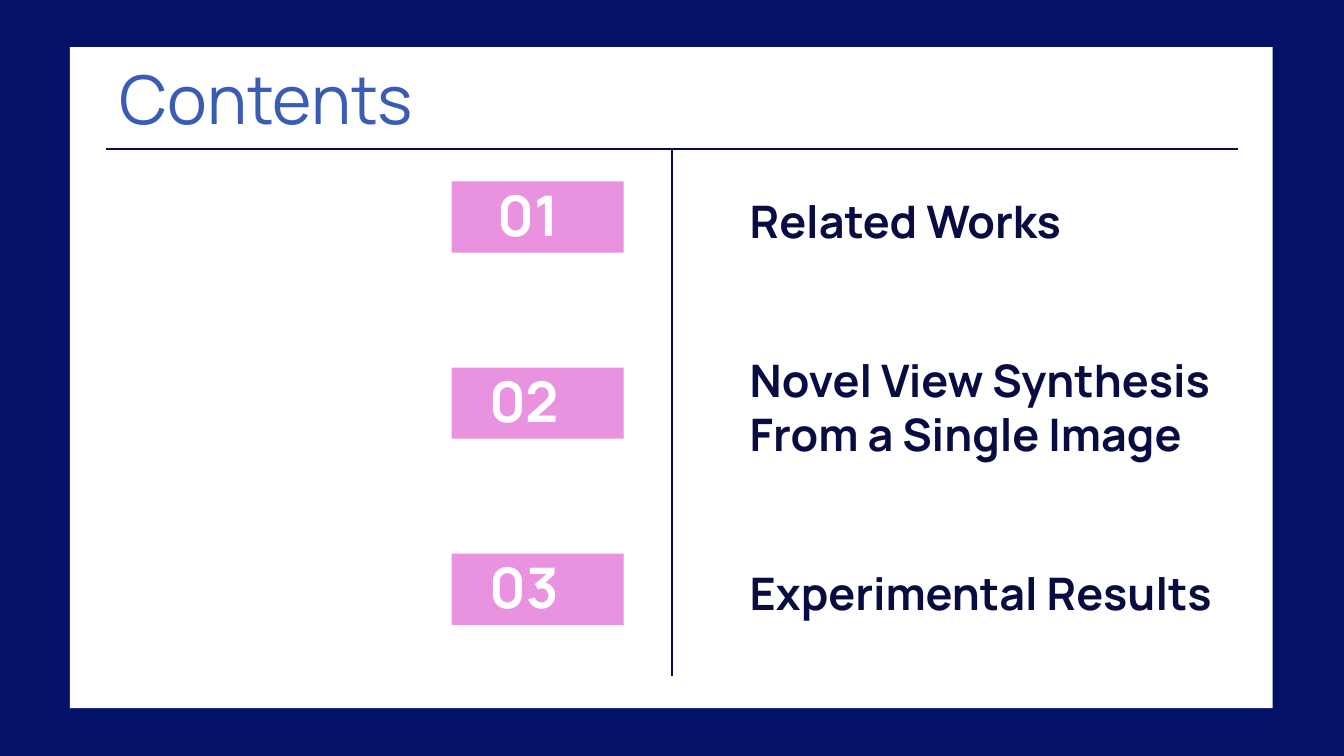
from pptx import Presentation
from pptx.dml.color import RGBColor
from pptx.enum.shapes import MSO_CONNECTOR as Connector, MSO_SHAPE as Shape
from pptx.enum.text import MSO_ANCHOR as Anchor, MSO_AUTO_SIZE as AutoSize, PP_ALIGN as Align
from pptx.oxml.ns import qn
from pptx.util import Inches, Pt

COLORS = {"navy": "031267", "ink": "080C41", "pink": "E992DF", "blue": "3B5CB3", "white": "FFFFFF"}
FONT = "Manrope"
WIDTH = 10
HEIGHT = WIDTH * 9 / 16
MIDDLE = WIDTH / 2
MARGIN, RULE_Y = 0.79, 1.11
FIRST_ROW, LAST_ROW = 1.35, 4.12
TOPICS = ["Related Works", "Novel View Synthesis From a Single Image", "Experimental Results"]


def color(key):
    """Return the palette colour called key."""
    return RGBColor.from_string(COLORS[key])


def add_panel(slide, box, fill):
    """Add a plain filled rectangle in box."""
    panel = slide.shapes.add_shape(Shape.RECTANGLE, *map(Inches, box))
    panel.shadow.inherit = False
    panel.fill.solid()
    panel.fill.fore_color.rgb = color(fill)
    panel.line.fill.background()


def add_rule(slide, start, end):
    """Add a thin dark line between two points."""
    rule = slide.shapes.add_connector(Connector.STRAIGHT, *map(Inches, start + end))
    rule.line.color.rgb = color("ink")
    rule.line.width = Pt(0.75)
    properties = rule.element.spPr
    properties.append(properties.makeelement(qn("a:effectLst"), {}))


def write(holder, wording, size, shade, bold=False, align=Align.LEFT, anchor=Anchor.MIDDLE):
    """Put formatted wording into a placeholder or text box."""
    frame = holder.text_frame
    frame.text = wording
    frame.word_wrap = True
    frame.auto_size = AutoSize.NONE
    frame.vertical_anchor = anchor
    frame.margin_left = frame.margin_right = frame.margin_top = frame.margin_bottom = Inches(0.1)
    paragraph = frame.paragraphs[0]
    paragraph.alignment = align
    paragraph.line_spacing = 1.0
    font = paragraph.runs[0].font
    font.name, font.size, font.bold = FONT, Pt(size), bold
    font.color.rgb = color(shade)


def add_heading(slide, box):
    """Place the title in box and the rule beneath it."""
    title = slide.shapes.title
    title.left, title.top, title.width, title.height = map(Inches, box)
    write(title, "Contents", 36, "blue")
    title.element.getparent().append(title.element)
    add_rule(slide, (MARGIN, RULE_Y), (WIDTH - MARGIN, RULE_Y))


def add_topic(slide, box, number, topic):
    """Place one numbered topic in the row given by box."""
    left, top, width, height = box
    add_panel(slide, (left + 0.12, top, 1.28, 0.53), "pink")
    number_box = slide.shapes.add_textbox(*map(Inches, (left, top - 0.06, 1.02, 0.65)))
    write(number_box, f"{number:02}", 30, "white", True, Align.RIGHT, Anchor.BOTTOM)
    indent = 2.24
    topic_box = slide.shapes.add_textbox(*map(Inches, (left + indent, top, width - indent, height)))
    write(topic_box, topic, 24, "ink", True)


def build_contents(slide):
    """Build the whole contents slide."""
    slide.background.fill.solid()
    slide.background.fill.fore_color.rgb = color("navy")
    add_panel(slide, (0.52, 0.35, 8.95, 4.92), "white")
    add_heading(slide, (MARGIN, 0.42, WIDTH - 2 * MARGIN, 0.62))
    pitch = (LAST_ROW - FIRST_ROW) / (len(TOPICS) - 1)
    for row, topic in enumerate(TOPICS):
        add_topic(slide, (3.24, FIRST_ROW + row * pitch, 6.05, 0.58), row + 1, topic)
    add_rule(slide, (MIDDLE, RULE_Y), (MIDDLE, 5.03))


def main():
    """Create and save the presentation."""
    deck = Presentation()
    deck.slide_width, deck.slide_height = Inches(WIDTH), Inches(HEIGHT)
    build_contents(deck.slides.add_slide(deck.slide_layouts[5]))
    deck.save("out.pptx")


if __name__ == "__main__":
    main()
